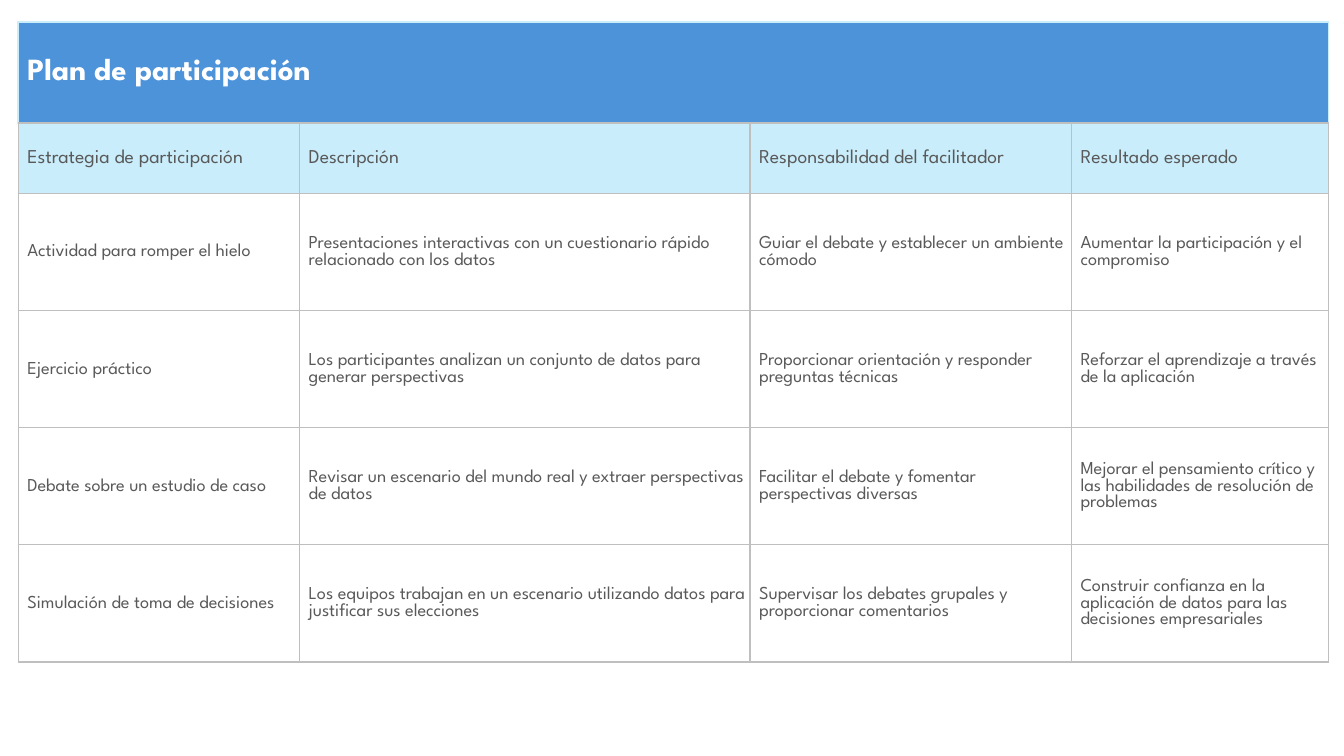
from lxml.etree import SubElement
from pptx import Presentation
from pptx.dml.color import RGBColor
from pptx.enum.text import MSO_ANCHOR
from pptx.oxml.ns import qn
from pptx.util import Cm, Pt

WHITE = RGBColor(0xFF, 0xFF, 0xFF)
BLUE = RGBColor(0x4D, 0x93, 0xD9)
PALE_BLUE = RGBColor(0xCA, 0xED, 0xFB)
GREY = RGBColor(0xBF, 0xBF, 0xBF)
TEXT_GREY = RGBColor(0x59, 0x59, 0x59)

TITLE = "Plan de participación"
HEADINGS = ["Estrategia de participación", "Descripción",
            "Responsabilidad del facilitador", "Resultado esperado"]
STRATEGIES = [
    ["Actividad para romper el hielo",
     "Presentaciones interactivas con un cuestionario rápido relacionado con los datos",
     "Guiar el debate y establecer un ambiente cómodo",
     "Aumentar la participación y el compromiso"],
    ["Ejercicio práctico",
     "Los participantes analizan un conjunto de datos para generar perspectivas",
     "Proporcionar orientación y responder preguntas técnicas",
     "Reforzar el aprendizaje a través de la aplicación"],
    ["Debate sobre un estudio de caso",
     "Revisar un escenario del mundo real y extraer perspectivas de datos",
     "Facilitar el debate y fomentar perspectivas diversas",
     "Mejorar el pensamiento crítico y las habilidades de resolución de problemas"],
    ["Simulación de toma de decisiones",
     "Los equipos trabajan en un escenario utilizando datos para justificar sus elecciones",
     "Supervisar los debates grupales y proporcionar comentarios",
     "Construir confianza en la aplicación de datos para las decisiones empresariales"],
]
COL_WIDTHS = [7.09, 11.35, 8.1, 6.48]
ROW_HEIGHTS = [2.54, 1.78] + [2.95] * len(STRATEGIES)


class PlanSlide:
    """Holds the table style and the current slide."""

    font_name = "League Spartan"
    cell_format = {
        "vertical_anchor": MSO_ANCHOR.MIDDLE,
        "margin_left": Cm(0.23), "margin_top": Cm(0.02),
        "margin_right": Cm(0.02), "margin_bottom": Cm(0),
    }
    grid = {side: (GREY, 1) for side in "LRTB"}
    title_grid = {side: (PALE_BLUE, 1.5) for side in "LRT"} | {"B": (GREY, 1)}

    def __init__(self, prs):
        self.s = prs.slides.add_slide(prs.slide_layouts[6])

    def table(self, left, top, widths, heights):
        frame = self.s.shapes.add_table(
            len(heights), len(widths), Cm(left), Cm(top),
            Cm(sum(widths)), Cm(sum(heights)))
        tbl = frame.table
        tbl.first_row = tbl.horz_banding = False
        for col, width in zip(tbl.columns, widths):
            col.width = Cm(width)
        for row, height in zip(tbl.rows, heights):
            row.height = Cm(height)
        return tbl

    def borders(self, cell, lines):
        tcPr = cell._tc.get_or_add_tcPr()
        for side, (color, width) in lines.items():
            ln = SubElement(tcPr, qn(f"a:ln{side}"), w=str(Pt(width)))
            fill = SubElement(ln, qn("a:solidFill"))
            SubElement(fill, qn("a:srgbClr"), val=str(color))

    def row(self, cells, texts, size, color=TEXT_GREY, bold=False, fill=None, lines=grid):
        for cell, text in zip(cells, texts):
            for name, value in self.cell_format.items():
                setattr(cell, name, value)
            self.borders(cell, lines)
            if fill is None:
                cell.fill.background()
            else:
                cell.fill.solid()
                cell.fill.fore_color.rgb = fill
            if text:
                self.text(cell, text, size, color, bold)

    def text(self, cell, text, size, color, bold):
        r = cell.text_frame.paragraphs[0].add_run()
        r.text = text
        font = {"name": self.font_name, "size": Pt(size), "bold": bold}
        for name, value in font.items():
            setattr(r.font, name, value)
        r.font.color.rgb = color


def main():
    prs = Presentation()
    prs.slide_width, prs.slide_height = Cm(33.87), Cm(19.05)
    slide = PlanSlide(prs)
    tbl = slide.table(0.46, 0.56, COL_WIDTHS, ROW_HEIGHTS)
    title_row, heading_row, *strategy_rows = tbl.rows

    # Title band across all columns
    last = len(COL_WIDTHS) - 1
    tbl.cell(0, 0).merge(tbl.cell(0, last))
    slide.row(title_row.cells, [TITLE] + [""] * last, 22, WHITE, True,
              BLUE, slide.title_grid)

    # Column headings
    slide.row(heading_row.cells, HEADINGS, 14, fill=PALE_BLUE)

    # Strategies
    for row, texts in zip(strategy_rows, STRATEGIES):
        slide.row(row.cells, texts, 13)

    prs.save("out.pptx")


if __name__ == "__main__":
    main()
